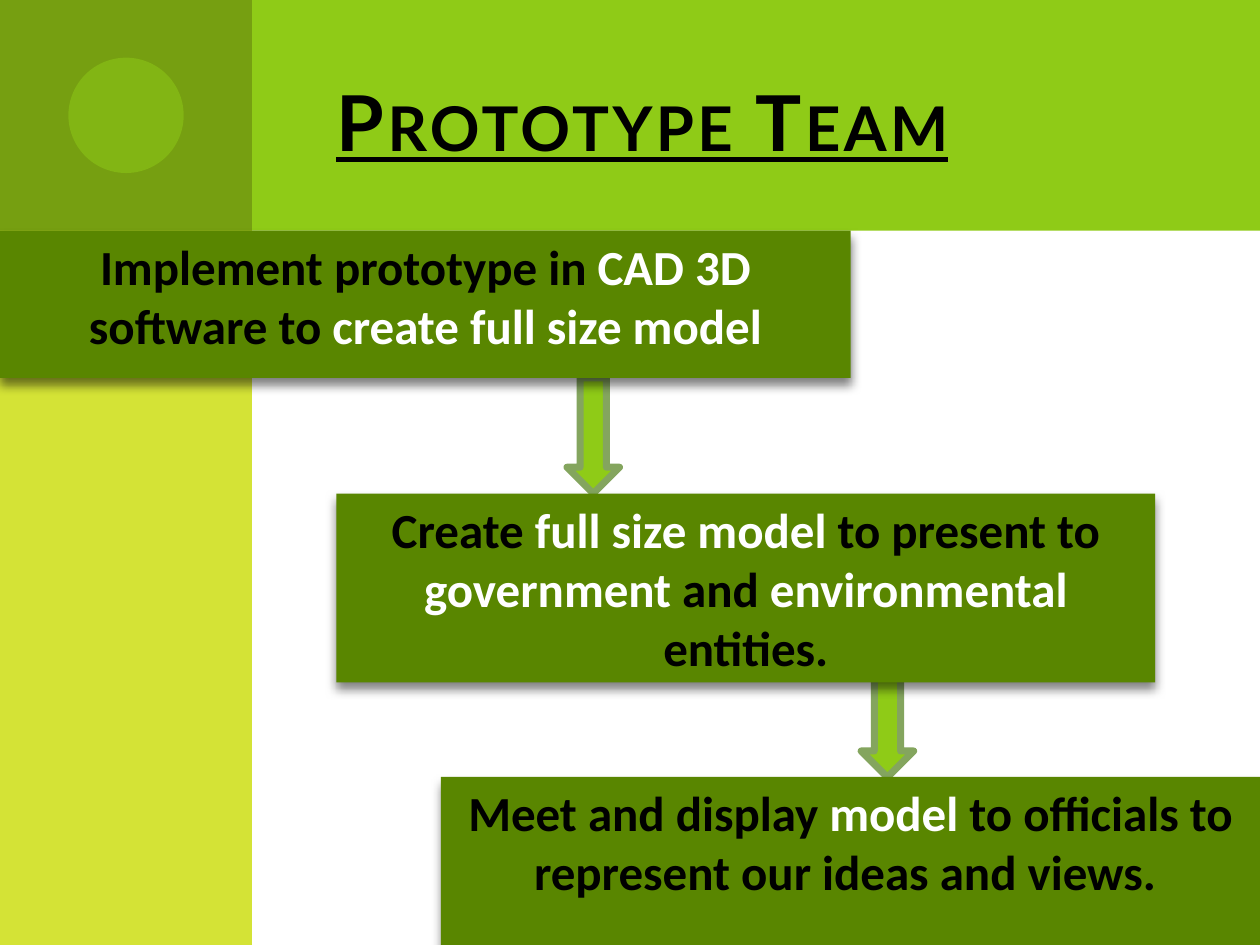
import pptx
import pptx.util
import pptx.dml.color
import pptx.enum.shapes
import pptx.enum.text
import pptx.oxml
import pptx.oxml.ns
from lxml import etree

Cm, Pt = pptx.util.Cm, pptx.util.Pt
KIND = pptx.enum.shapes.MSO_SHAPE
ALIGN = pptx.enum.text.PP_ALIGN
ANCHOR = pptx.enum.text.MSO_ANCHOR
HUES = {
    "head": "8FCB17", "side": "D4E336", "corner": "769F11",
    "box": "598600", "edge": "84A55E", "dark": "000000", "light": "FFFFFF",
}
WIDE, TALL, SIDE, HEAD = 25.4, 19.05, 5.08, 4.65
BOXES = [
    ((0, HEAD, 17.15, 2.97),
     ["Implement prototype in ", "CAD 3D ", "software to ", "create full size model"]),
    ((6.78, 9.95, 16.51, 3.81),
     ["Create ", "full size model ", "to present to ", "government", " and ",
      "environmental ", "entities."]),
    ((8.89, 15.66, 16.51, 3.39),
     ["Meet and display ", "model",
      " to officials to represent our ideas and views. "]),
]
ARROWS = [(11.43, 7.62, 1.06, 2.33), (17.36, 13.55, 1.06, 2.12)]


def hue(name):
    """Return the named colour."""
    return pptx.dml.color.RGBColor.from_string(HUES[name])


def add_node(root, tag, **attrs):
    """Append a drawing node with the given attributes."""
    return etree.SubElement(root, pptx.oxml.ns.qn(tag), attrs)


def add_form(slide, kind, area, fill):
    """Add a plain filled shape without line or shadow."""
    form = slide.shapes.add_shape(kind, *map(Cm, area))
    form.shadow.inherit = False
    form.fill.solid()
    form.fill.fore_color.rgb = hue(fill)
    form.line.fill.background()
    return form


def add_frame(slide):
    """Add the header, the side band and the corner disc."""
    add_form(slide, KIND.RECTANGLE, (SIDE, 0, WIDE - SIDE, HEAD), "head")
    add_form(slide, KIND.RECTANGLE, (0, 0, SIDE, TALL), "side")
    add_form(slide, KIND.RECTANGLE, (0, 0, SIDE, HEAD), "corner")
    size = HEAD / 2
    disc = add_form(slide, KIND.OVAL,
                    ((SIDE - size) / 2, (HEAD - size) / 2, size, size), "head")
    tint = disc._element.spPr.find(".//" + pptx.oxml.ns.qn("a:srgbClr"))
    add_node(tint, "a:alpha", val="50000")


def add_arrow(slide, area):
    """Add a block arrow that points down."""
    arrow = add_form(slide, KIND.DOWN_ARROW, area, "head")
    arrow.line.color.rgb = hue("edge")
    arrow.line.width = Pt(4)
    add_node(arrow.line._get_or_add_ln(), "a:round")


def add_shade(form):
    """Give a shape a soft shadow below it."""
    list_ = form._element.spPr.find(pptx.oxml.ns.qn("a:effectLst"))
    shade = add_node(list_, "a:outerShdw", blurRad=str(Pt(6)), dist=str(Pt(4)),
                     dir="5400000", rotWithShape="0")
    tint = add_node(shade, "a:srgbClr", val=HUES["dark"])
    add_node(tint, "a:alpha", val="50000")


def add_run(para, text, font, size, tone):
    """Add one bold run and return it."""
    run = para.add_run()
    run.text = text
    run.font.name = font
    run.font.size = Pt(size)
    run.font.bold = True
    run.font.color.rgb = hue(tone)
    return run


def add_box(slide, area, parts):
    """Add a step box whose runs switch between dark and light."""
    box = add_form(slide, KIND.RECTANGLE, area, "box")
    add_shade(box)
    frame = box.text_frame
    frame.word_wrap = True
    frame.vertical_anchor = ANCHOR.TOP
    para = frame.paragraphs[0]
    para.alignment = ALIGN.CENTER
    for i, part in enumerate(parts):
        add_run(para, part, "Calibri", 28, ("dark", "light")[i % 2])


def set_title(slide, text):
    """Fill the title placeholder and bring it to the front."""
    title = slide.shapes.title
    title.left, title.top, title.width, title.height = map(
        Cm, (6.78, 0.84, 13.13, 3.18))
    frame = title.text_frame
    frame.auto_size = pptx.enum.text.MSO_AUTO_SIZE.NONE
    frame.word_wrap = True
    frame.vertical_anchor = ANCHOR.MIDDLE
    frame.margin_left, frame.margin_right = Cm(0), Cm(0.46)
    para = frame.paragraphs[0]
    para.alignment = ALIGN.RIGHT
    run = add_run(para, text, "Lato", 44, "dark")
    run.font.underline = True
    props = run._r.get_or_add_rPr()
    props.set("cap", "small")
    props.set("spc", "200")
    slide.shapes._spTree.append(title._element)


def main():
    """Build the slide and save it."""
    deck = pptx.Presentation()
    deck.slide_width, deck.slide_height = Cm(WIDE), Cm(TALL)
    slide = deck.slides.add_slide(deck.slide_layouts[5])
    add_frame(slide)
    for area in ARROWS:
        add_arrow(slide, area)
    for area, parts in BOXES:
        add_box(slide, area, parts)
    set_title(slide, "Prototype Team")
    deck.save("out.pptx")


if __name__ == "__main__":
    main()
